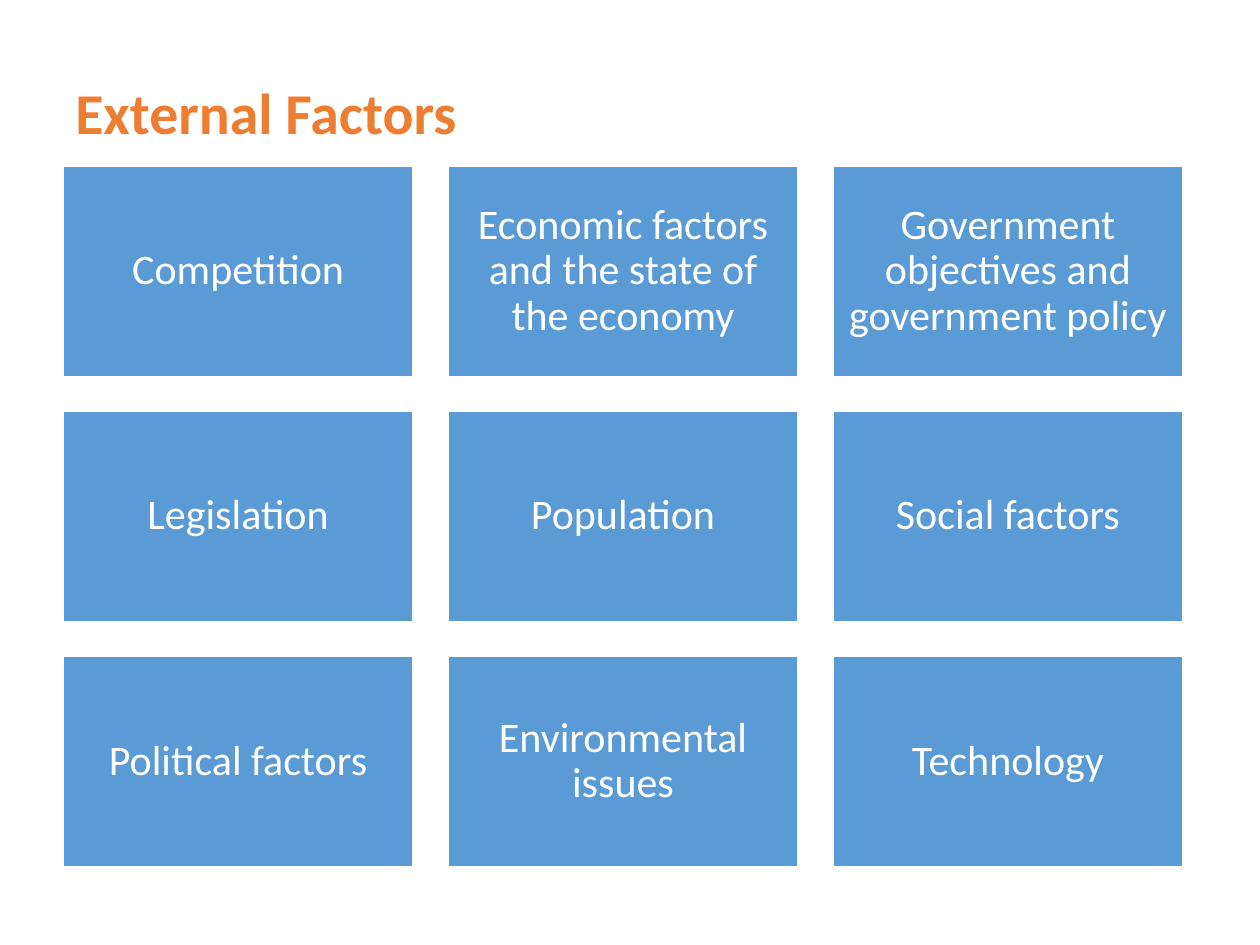
from dataclasses import dataclass

from pptx import Presentation
from pptx.dml.color import RGBColor
from pptx.enum.shapes import MSO_SHAPE as Shape
from pptx.enum.text import MSO_ANCHOR as Anchor, PP_ALIGN as Align
from pptx.util import Cm, Pt


@dataclass(frozen=True)
class Theme:
    font: str = "Calibri"
    title_color: RGBColor = RGBColor(0xED, 0x7D, 0x31)
    tile_color: RGBColor = RGBColor(0x5B, 0x9B, 0xD5)
    white: RGBColor = RGBColor(0xFF, 0xFF, 0xFF)
    title_size: Pt = Pt(33)
    tile_size: Pt = Pt(24)


theme = Theme()


def write(box, text, color, align, inset, font_format):
    frame = box.text_frame
    frame_format = {
        "word_wrap": True,
        "vertical_anchor": Anchor.MIDDLE,
        "margin_left": inset,
        "margin_right": inset,
    }
    for name, value in frame_format.items():
        setattr(frame, name, value)
    para = frame.paragraphs[0]
    para.alignment = align
    para.line_spacing = 0.9
    span = para.add_run()
    span.text = text
    for name, value in font_format.items():
        setattr(span.font, name, value)
    span.font.color.rgb = color


deck = Presentation()
deck.slide_width, deck.slide_height = Cm(25.4), Cm(19.05)
slide = deck.slides.add_slide(deck.slide_layouts[6])

# Title
title = slide.shapes.add_textbox(Cm(1.27), Cm(0.74), Cm(22.86), Cm(3.18))
title_format = {"name": theme.font, "size": theme.title_size, "bold": True}
write(title, "External Factors", theme.title_color, Align.LEFT, Cm(0.25), title_format)

# Grid of factors
factors = [
    ["Competition", "Economic factors and the state of the economy",
     "Government objectives and government policy"],
    ["Legislation", "Population", "Social factors"],
    ["Political factors", "Environmental issues", "Technology"],
]
left, top = Cm(1.27), Cm(3.35)
width, height, gap = Cm(7.06), Cm(4.24), Cm(0.7)
tile_format = {"name": theme.font, "size": theme.tile_size}

for row, names in enumerate(factors):
    for column, factor in enumerate(names):
        tile = slide.shapes.add_shape(
            Shape.RECTANGLE,
            left + column * (width + gap), top + row * (height + gap),
            width, height,
        )
        tile.shadow.inherit = False
        tile.fill.solid()
        tile.fill.fore_color.rgb = theme.tile_color
        tile.line.color.rgb = theme.white
        tile.line.width = Pt(1)
        write(tile, factor, theme.white, Align.CENTER, Cm(0.25), tile_format)

deck.save("out.pptx")
